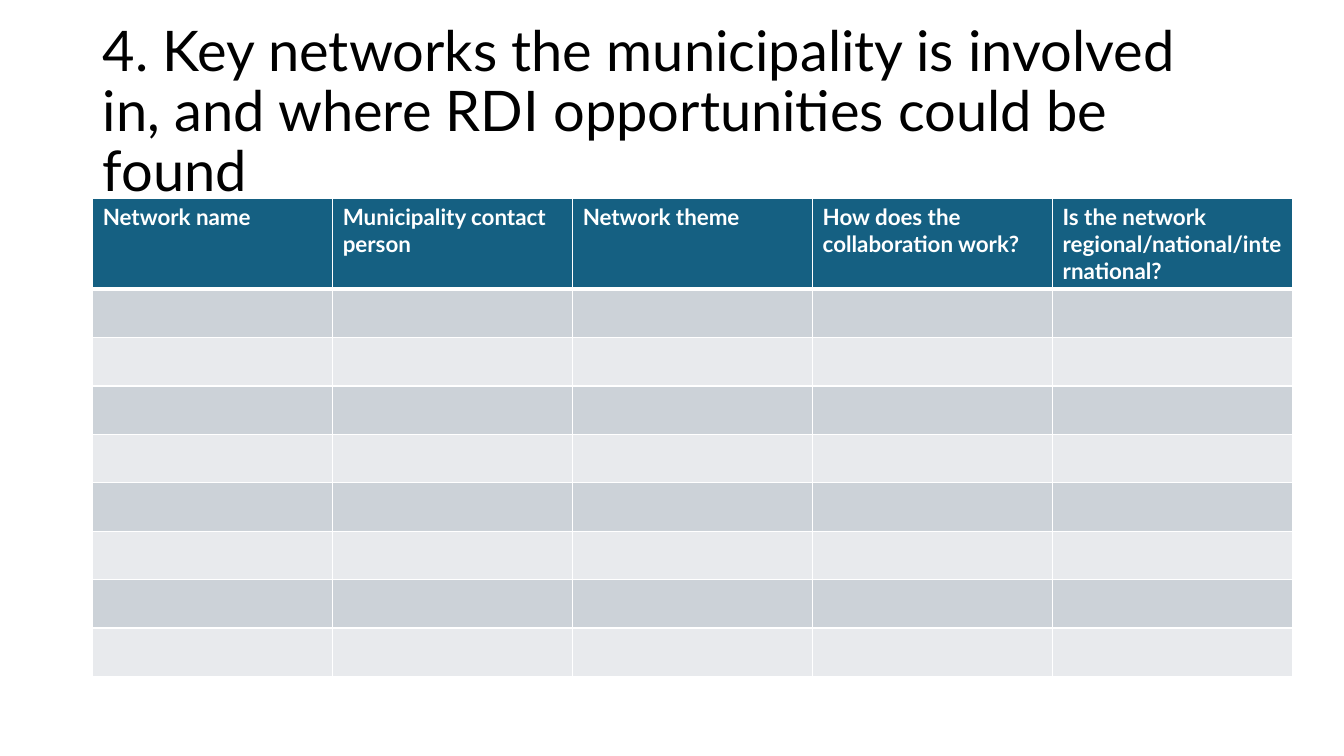
"""Build the slide on municipal networks and RDI opportunities."""
import pptx
import pptx.dml.color
import pptx.enum.text
import pptx.util
import lxml.etree
import pptx.oxml.ns

FONT = "Lato"
WHITE = "FFFFFF"
HEADER_FILL = "156082"
BAND_FILLS = ["CCD2D8", "E8EAED"]
LEFT = 0.92
TABLE_TOP = 1.97
COLUMN_WIDTH = 2.38
HEADER_HEIGHT = 0.9
ROW_HEIGHT = 0.48
EMPTY_ROWS = 8
HEADINGS = [
    "Network name",
    "Municipality contact person",
    "Network theme",
    "How does the collaboration work?",
    "Is the network regional/national/international?",
]


def color(code):
    return pptx.dml.color.RGBColor.from_string(code)


def add_border(cell, side, points):
    qn = pptx.oxml.ns.qn
    properties = cell._tc.get_or_add_tcPr()
    line = lxml.etree.SubElement(properties, qn(f"a:ln{side}"), w=str(pptx.util.Pt(points)))
    fill = lxml.etree.SubElement(line, qn("a:solidFill"))
    lxml.etree.SubElement(fill, qn("a:srgbClr"), val=WHITE)


inches = pptx.util.Inches
deck = pptx.Presentation()
deck.slide_width = inches(13.33)
deck.slide_height = inches(7.5)
slide = deck.slides.add_slide(deck.slide_layouts[5])

title = slide.shapes.title
title.left, title.top = inches(LEFT), inches(0.4)
title.width, title.height = inches(11.5), inches(1.45)
title.text_frame.word_wrap = True
title.text_frame.auto_size = pptx.enum.text.MSO_AUTO_SIZE.NONE
title.text_frame.vertical_anchor = pptx.enum.text.MSO_ANCHOR.MIDDLE
headline = title.text_frame.paragraphs[0]
headline.alignment = pptx.enum.text.PP_ALIGN.LEFT
headline.line_spacing = 0.9
headline_run = headline.add_run()
headline_run.text = (
    "4. Key networks the municipality is involved in, "
    "and where RDI opportunities could be found"
)
headline_run.font.name = FONT
headline_run.font.size = pptx.util.Pt(40)
headline_run.font.color.rgb = color("000000")

networks = slide.shapes.add_table(
    EMPTY_ROWS + 1,
    len(HEADINGS),
    inches(LEFT),
    inches(TABLE_TOP),
    inches(COLUMN_WIDTH * len(HEADINGS)),
    inches(HEADER_HEIGHT + ROW_HEIGHT * EMPTY_ROWS),
).table

for column in networks.columns:
    column.width = inches(COLUMN_WIDTH)

for row_index, row in enumerate(networks.rows):
    is_header = row_index == 0
    row.height = inches(HEADER_HEIGHT if is_header else ROW_HEIGHT)
    for cell in row.cells:
        add_border(cell, "L", 1)
        add_border(cell, "R", 1)
        add_border(cell, "T", 3 if row_index == 1 else 1)
        add_border(cell, "B", 3 if is_header else 1)
        cell.fill.solid()
        cell.fill.fore_color.rgb = color(
            HEADER_FILL if is_header else BAND_FILLS[(row_index - 1) % 2]
        )

for cell, heading in zip(networks.rows[0].cells, HEADINGS):
    heading_run = cell.text_frame.paragraphs[0].add_run()
    heading_run.text = heading
    heading_run.font.name = FONT
    heading_run.font.size = pptx.util.Pt(16)
    heading_run.font.bold = True
    heading_run.font.color.rgb = color(WHITE)

deck.save("out.pptx")
